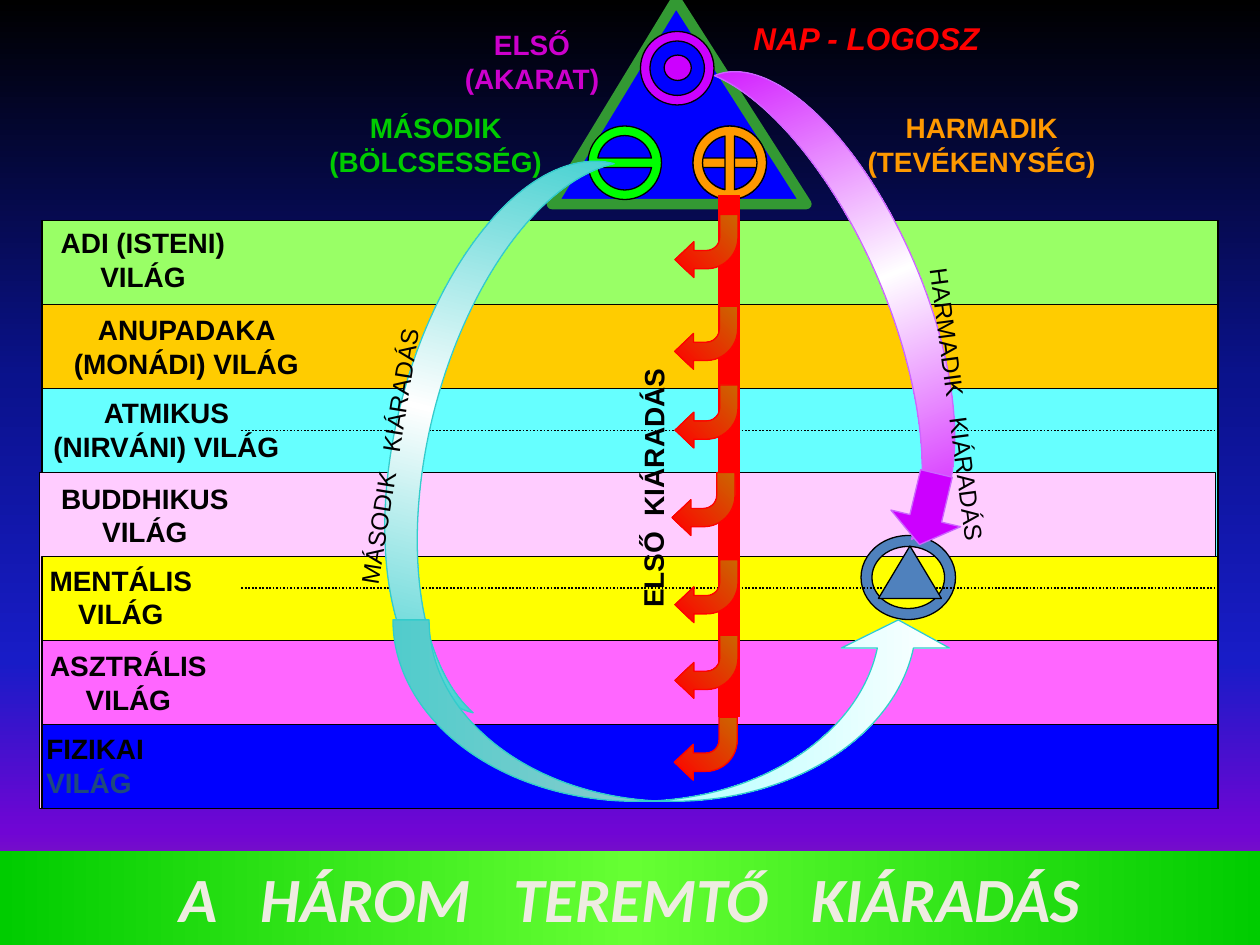
"""Build the slide of the three creative outpourings through the seven worlds."""
from lxml.etree import SubElement
from pptx import Presentation
from pptx.dml.color import RGBColor
from pptx.enum.dml import MSO_LINE
from pptx.enum.shapes import MSO_CONNECTOR, MSO_SHAPE as S
from pptx.enum.text import MSO_ANCHOR, PP_ALIGN
from pptx.oxml.ns import qn
from pptx.util import Pt

THEME = {
    "font": "Arial", "title_font": "Calibri",
    "label": 16, "sun": 18, "path": 14, "title": 36,
    "ink": "000000", "navy": "1F497D", "cream": "EEECE1", "red": "FF0000",
    "blue": "0000FF", "steel": "4F81BD", "violet": "CC00FF", "lilac": "CC66FF",
    "green": "00FF00", "frame": "339933", "orange": "FF9900", "teal": "33CCCC",
    "first": "CC00CC", "second": "00CC00",
}
T = THEME
SKY = [(0, "000000"), (40, "0A128C"), (70, "181CC7"), (88, "7005D4"), (100, "8C3D91")]
VIOLET = [(0, T["violet"]), (50, "FFFFFF"), (100, T["violet"])]
TEAL = [(0, T["teal"]), (50, "FFFFFF"), (100, T["teal"])]
ICE = [(0, "66FFFF"), (100, "FFFFFF")]
EMBER = [(0, "CC6600"), (100, T["red"])]
MEADOW = [(0, "00CC00"), (50, "66FF33"), (100, "00CC00")]

TITLE = "A HÁROM TEREMTŐ KIÁRADÁS"
BANDS = {"left": 24, "top": 126, "width": 672, "step": 48}
WORLDS = [
    ("99FF66", 0, [("ADI (ISTENI) VILÁG", "ink")], (19.4, 125.3, 124.6)),
    ("FFCC00", 0, [("ANUPADAKA (MONÁDI) VILÁG", "ink")], (19.4, 175, 174.2)),
    ("66FFFF", 0, [("ATMIKUS (NIRVÁNI) VILÁG", "ink")], (20.2, 222.5, 149.8)),
    ("FFCCFF", -1.5, [("BUDDHIKUS VILÁG", "ink")], (21.6, 271.4, 122.4)),
    ("FFFF00", 0, [("MENTÁLIS VILÁG", "ink")], (18.7, 318.2, 100.8)),
    ("FF66FF", 0, [("ASZTRÁLIS VILÁG", "ink")], (19.4, 367.2, 108)),
    ("0000FF", 0, [("FIZIKAI ", "ink"), ("VILÁG", "navy")], (19.4, 414.7, 108)),
]
ASPECTS = [
    ("ELSŐ\v(AKARAT)", "first", (252, 12.2, 104)),
    ("MÁSODIK\v(BÖLCSESSÉG)", "second", (180, 59.8, 138)),
    ("HARMADIK\v(TEVÉKENYSÉG)", "orange", (486, 59.8, 150)),
]
PATH_NAMES = [
    ("ELSŐ KIÁRADÁS", "label", True, 4.4, (274.3, 265.7, 198, 26.6), 270.2),
    ("MÁSODIK KIÁRADÁS", "path", False, 7.8, (129.6, 236.2, 215.3, 54), 279.1),
    ("HARMADIK KIÁRADÁS", "path", False, 7.8, (455, 213.8, 172, 36), 82.5),
]
SYMBOLS = [
    (S.ISOSCELES_TRIANGLE, (315.4, 0, 145.4, 116.6), "blue", "frame", 6, 0, [0.488]),
    (S.NO_SYMBOL, (336, 72, 42, 42), "green", "ink", 0.75, 315.1, [0.13]),
    (S.DONUT, (492, 306, 54, 48), "steel", "ink", 0.75, 0, [0.13]),
    (S.DONUT, (366, 18, 42, 42), "violet", "ink", 0.75, 0, [0.13]),
    (S.OVAL, (379.5, 31.5, 15.5, 14.5), "violet", "ink", 0.75, 0, []),
    (S.NO_SYMBOL, (396, 72, 42, 42), "orange", "ink", 0.75, 315.1, [0.13]),
    (S.NO_SYMBOL, (396, 72, 42, 42), "orange", "ink", 0.75, 225.1, [0.13]),
]
CORE = (S.ISOSCELES_TRIANGLE, (502, 312, 36, 30), "steel", "ink", 0.75, 0, [])
FLOWS = [
    (S.MOON, (462, 19.4, 63.4, 288), VIOLET, "lilac", 0.75, 337, [0.357]),
    (S.DOWN_ARROW, (509.8, 270, 41, 41.8), "violet", "lilac", 0.75, 13.4, [0.455, 0.376]),
    (S.MOON, (228, 78, 84, 324), TEAL, "teal", 0.75, 14.4, [0.232]),
    (S.CURVED_RIGHT_ARROW, (332.6, 246.2, 103.7, 319.7), ICE, "teal", 0.75, 270,
     [0.199, 0.596, 0.155]),
    (S.RECTANGLE, (410.4, 111.6, 12.2, 298), "red", "red", 0.75, 0, []),
]
BRANCHES = [(385.7, 122.6), (385.5, 175), (385.7, 220), (384, 270),
            (385.7, 319.8), (385.7, 363), (385.3, 409.8)]
PLANE_LINES = [246, 336]


def rgb(code):
    return RGBColor.from_string(code)


def paint(fill, owner, color, angle=270):
    if isinstance(color, str):
        fill.solid()
        fill.fore_color.rgb = rgb(T.get(color, color))
        return
    fill.gradient()
    fill.gradient_angle = angle
    stops = next(owner.iter(qn("a:gsLst")))
    for old in list(stops):
        stops.remove(old)
    for pos, code in color:
        stop = SubElement(stops, qn("a:gs"), pos=str(pos * 1000))
        SubElement(stop, qn("a:srgbClr"), val=code)


def add_shape(s, kind, box, color, edge, weight=0.75, turn=0, adj=(), angle=270):
    sp = s.shapes.add_shape(kind, *map(Pt, box))
    sp.shadow.inherit = False
    sp.rotation = turn
    for i, value in enumerate(adj):
        sp.adjustments[i] = value
    paint(sp.fill, sp._element.spPr, color, angle)
    sp.line.color.rgb = rgb(T[edge])
    sp.line.width = Pt(weight)
    return sp


def write(tf, runs, size, align=PP_ALIGN.CENTER, gap=0, **extra):
    p = tf.paragraphs[0]
    p.alignment = align
    for text, color in runs:
        pieces = text.replace(" ", "| |").split("|") if gap else [text]
        for piece in pieces:
            if "\v" in piece:
                first, piece = piece.split("\v")
                add_run(p, first, size, color, extra)
                p.add_line_break()
            r = add_run(p, piece, size, color, extra)
            if piece == " ":
                r.font._element.set("spc", str(round(gap * 100)))


def add_run(p, text, size, color, extra):
    r = p.add_run()
    r.text = text
    fmt = {"name": T["font"], "size": Pt(T[size]), "bold": True, **extra}
    for key, value in fmt.items():
        setattr(r.font, key, value)
    r.font.color.rgb = rgb(T[color])
    return r


def add_text(s, box, runs, size, turn=0, **options):
    sp = s.shapes.add_textbox(*map(Pt, box))
    sp.rotation = turn
    sp.text_frame.word_wrap = True
    write(sp.text_frame, runs, size, **options)


def add_plane_line(s, y):
    line = s.shapes.add_connector(MSO_CONNECTOR.STRAIGHT, Pt(138), Pt(y), Pt(696), Pt(y))
    line.line.color.rgb = rgb(T["ink"])
    line.line.width = Pt(1)
    line.line.dash_style = MSO_LINE.ROUND_DOT
    SubElement(line._element.spPr, qn("a:effectLst"))


def main():
    prs = Presentation()
    prs.slide_width, prs.slide_height = Pt(720), Pt(540)
    s = prs.slides.add_slide(prs.slide_layouts[5])
    paint(s.background.fill, s._element, SKY)

    bottom = BANDS["top"] + BANDS["step"] * len(WORLDS)
    for i, (color, shift, _, _) in enumerate(WORLDS):
        top = BANDS["top"] + BANDS["step"] * i
        box = (BANDS["left"] + shift, top, BANDS["width"], bottom - top)
        add_shape(s, S.RECTANGLE, box, color, "ink")
    for symbol in SYMBOLS:
        add_shape(s, *symbol)
    for y in PLANE_LINES:
        add_plane_line(s, y)
    add_shape(s, *CORE)

    for _, _, runs, place in WORLDS:
        align = PP_ALIGN.LEFT if len(runs) > 1 else PP_ALIGN.CENTER
        add_text(s, (*place, 46), runs, "label", align=align)
    for text, color, place in ASPECTS:
        add_text(s, (*place, 46), [(text, color)], "label")

    flows = [add_shape(s, *flow) for flow in FLOWS]
    flows[0]._element.spPr.find(qn("a:xfrm")).set("flipH", "1")
    for left, top in BRANCHES:
        add_shape(s, S.BENT_ARROW, (left, top, 36, 36), EMBER, "red", turn=180,
                  adj=(0.29, 0.285, 0.3, 0.5), angle=45)

    add_text(s, (423.4, 7.2, 213, 36), [("NAP - LOGOSZ", "red")], "sun",
             align=PP_ALIGN.LEFT, italic=True)
    for text, size, bold, gap, box, turn in PATH_NAMES:
        add_text(s, box, [(text, "ink")], size, turn, gap=gap, bold=bold)

    title = s.shapes.title
    title.left, title.top, title.width, title.height = map(Pt, (0, 486, 720, 54))
    paint(title.fill, title._element.spPr, MEADOW, 0)
    title.text_frame.vertical_anchor = MSO_ANCHOR.MIDDLE
    write(title.text_frame, [(TITLE, "cream")], "title", gap=16.3,
          name=T["title_font"], italic=True)
    prs.save("out.pptx")


if __name__ == "__main__":
    main()
